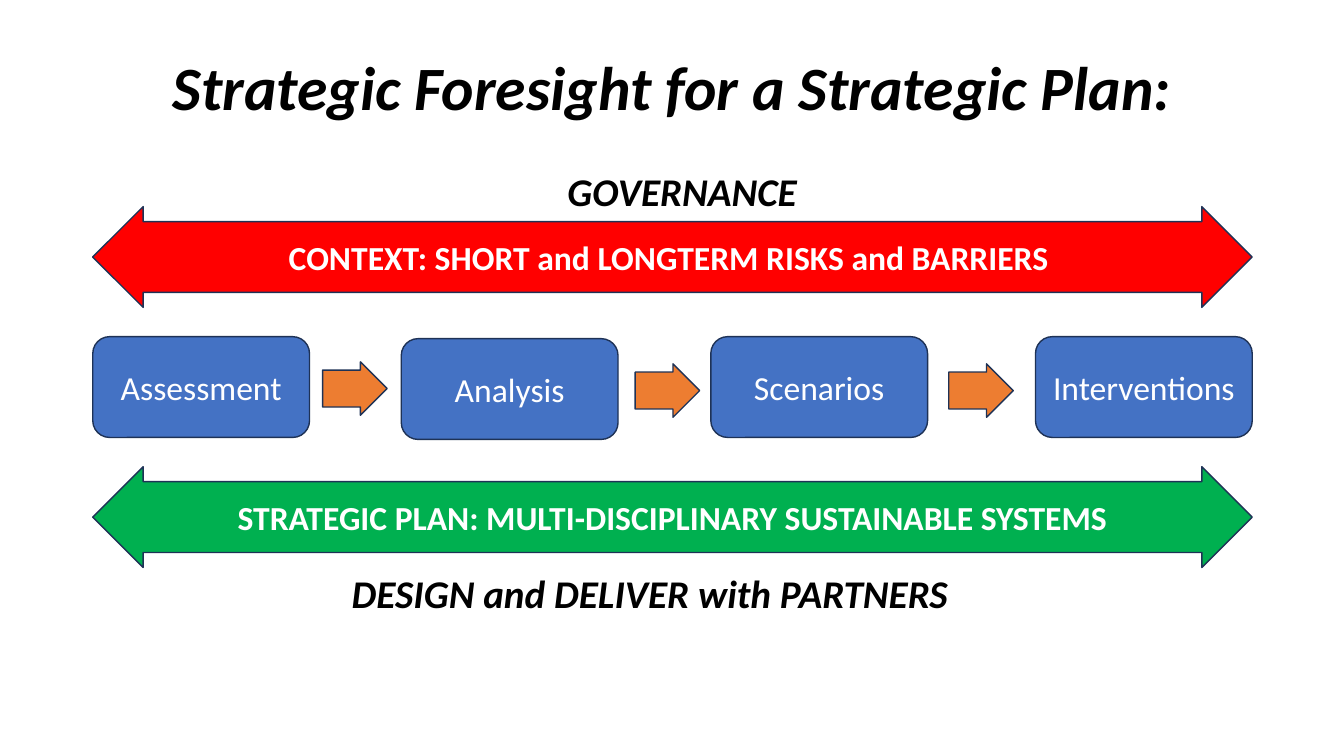
from dataclasses import dataclass

import pptx
import pptx.dml.color
import pptx.enum.shapes
import pptx.enum.text
import pptx.presentation
import pptx.shapes.autoshape
import pptx.slide
import pptx.util

EMU_PER_PX = 9144  # 100 px to the inch
SLIDE_WIDTH, SLIDE_HEIGHT = 1333, 750
LEFT, FULL_WIDTH, BAND_HEIGHT = 92, 1150, 100
STAGE_WIDTH, STEP_WIDTH, STEP_HEIGHT = 215, 64, 53

Preset = pptx.enum.shapes.MSO_SHAPE
Align = pptx.enum.text.PP_ALIGN
Anchor = pptx.enum.text.MSO_ANCHOR
AutoSize = pptx.enum.text.MSO_AUTO_SIZE


@dataclass(frozen=True)
class Theme:
    font: str = "Calibri"
    black: str = "000000"
    white: str = "FFFFFF"
    blue: str = "4472C4"
    orange: str = "ED7D31"
    red: str = "FF0000"
    green: str = "00B050"
    outline: str = "1E3256"
    title_size: int = 44
    caption_size: int = 28
    body_size: int = 24


THEME = Theme()


@dataclass(frozen=True)
class Box:
    left: int
    top: int
    width: int
    height: int

    def emu(self) -> tuple[int, int, int, int]:
        return (self.left * EMU_PER_PX, self.top * EMU_PER_PX,
                self.width * EMU_PER_PX, self.height * EMU_PER_PX)


@dataclass(frozen=True)
class Block:
    """A filled, outlined preset shape with an optional label."""
    preset: Preset
    box: Box
    fill: str
    text: str = ""
    bold: bool = False
    adjustments: tuple[float, ...] = ()


@dataclass(frozen=True)
class Caption:
    """Bold italic black text without a frame."""
    text: str
    box: Box
    size: int = THEME.caption_size
    align: Align = Align.LEFT
    anchor: Anchor = Anchor.TOP
    auto_size: AutoSize = AutoSize.SHAPE_TO_FIT_TEXT
    wrap: bool = True
    line_spacing: float = 1.0


def band(top: int, fill: str, text: str) -> Block:
    return Block(Preset.LEFT_RIGHT_ARROW, Box(LEFT, top, FULL_WIDTH, BAND_HEIGHT),
                 fill, text, True, (0.703, 0.5))


def stage(left: int, top: int, text: str) -> Block:
    return Block(Preset.ROUNDED_RECTANGLE, Box(left, top, STAGE_WIDTH, BAND_HEIGHT),
                 THEME.blue, text)


def step(left: int, top: int) -> Block:
    return Block(Preset.RIGHT_ARROW, Box(left, top, STEP_WIDTH, STEP_HEIGHT),
                 THEME.orange, adjustments=(0.692, 0.5))


BLOCKS = (
    stage(LEFT, 334, "Assessment"),
    stage(398, 336, "Analysis"),
    stage(705, 334, "Scenarios"),
    stage(LEFT + FULL_WIDTH - STAGE_WIDTH, 334, "Interventions"),
    band(205, THEME.red, "CONTEXT: SHORT and LONGTERM RISKS and BARRIERS "),
    band(463, THEME.green, "STRATEGIC PLAN: MULTI-DISCIPLINARY SUSTAINABLE SYSTEMS"),
    step(320, 359),
    step(630, 361),
    step(941, 361),
)

CAPTIONS = (
    Caption("Strategic Foresight for a Strategic Plan:", Box(LEFT, 40, FULL_WIDTH, 100),
            THEME.title_size, Align.CENTER, Anchor.MIDDLE, AutoSize.NONE, line_spacing=0.9),
    Caption("GOVERNANCE", Box(553, 161, 259, 57), wrap=False),
    Caption("DESIGN and DELIVER with PARTNERS", Box(339, 560, 645, 57)),
)


def rgb(value: str) -> pptx.dml.color.RGBColor:
    return pptx.dml.color.RGBColor.from_string(value)


def set_attributes(target: object, values: dict[str, object]) -> None:
    for name, value in values.items():
        setattr(target, name, value)


def write_text(shape: pptx.shapes.autoshape.Shape, text: str, color: str,
               frame: dict[str, object], paragraph_format: dict[str, object],
               font: dict[str, object]) -> None:
    set_attributes(shape.text_frame, frame)
    paragraph = shape.text_frame.paragraphs[0]
    set_attributes(paragraph, paragraph_format)
    run = paragraph.add_run()
    run.text = text
    set_attributes(run.font, {"name": THEME.font, **font})
    run.font.color.rgb = rgb(color)


def draw_block(slide: pptx.slide.Slide, block: Block) -> None:
    shape = slide.shapes.add_shape(block.preset, *block.box.emu())
    shape.shadow.inherit = False
    for index, value in enumerate(block.adjustments):
        shape.adjustments[index] = value
    shape.fill.solid()
    shape.fill.fore_color.rgb = rgb(block.fill)
    shape.line.color.rgb = rgb(THEME.outline)
    shape.line.width = pptx.util.Pt(1)
    if block.text:
        write_text(shape, block.text, THEME.white,
                   {"vertical_anchor": Anchor.MIDDLE, "word_wrap": True},
                   {"alignment": Align.CENTER},
                   {"size": pptx.util.Pt(THEME.body_size), "bold": block.bold})


def draw_caption(slide: pptx.slide.Slide, caption: Caption) -> None:
    shape = slide.shapes.add_textbox(*caption.box.emu())
    write_text(shape, caption.text, THEME.black,
               {"vertical_anchor": caption.anchor, "word_wrap": caption.wrap,
                "auto_size": caption.auto_size},
               {"alignment": caption.align, "line_spacing": caption.line_spacing},
               {"size": pptx.util.Pt(caption.size), "bold": True, "italic": True})


def build() -> pptx.presentation.Presentation:
    presentation = pptx.Presentation()
    set_attributes(presentation, {"slide_width": SLIDE_WIDTH * EMU_PER_PX,
                                  "slide_height": SLIDE_HEIGHT * EMU_PER_PX})
    slide = presentation.slides.add_slide(presentation.slide_layouts[6])
    for block in BLOCKS:
        draw_block(slide, block)
    for caption in CAPTIONS:
        draw_caption(slide, caption)
    return presentation


def main() -> None:
    build().save("out.pptx")


if __name__ == "__main__":
    main()
